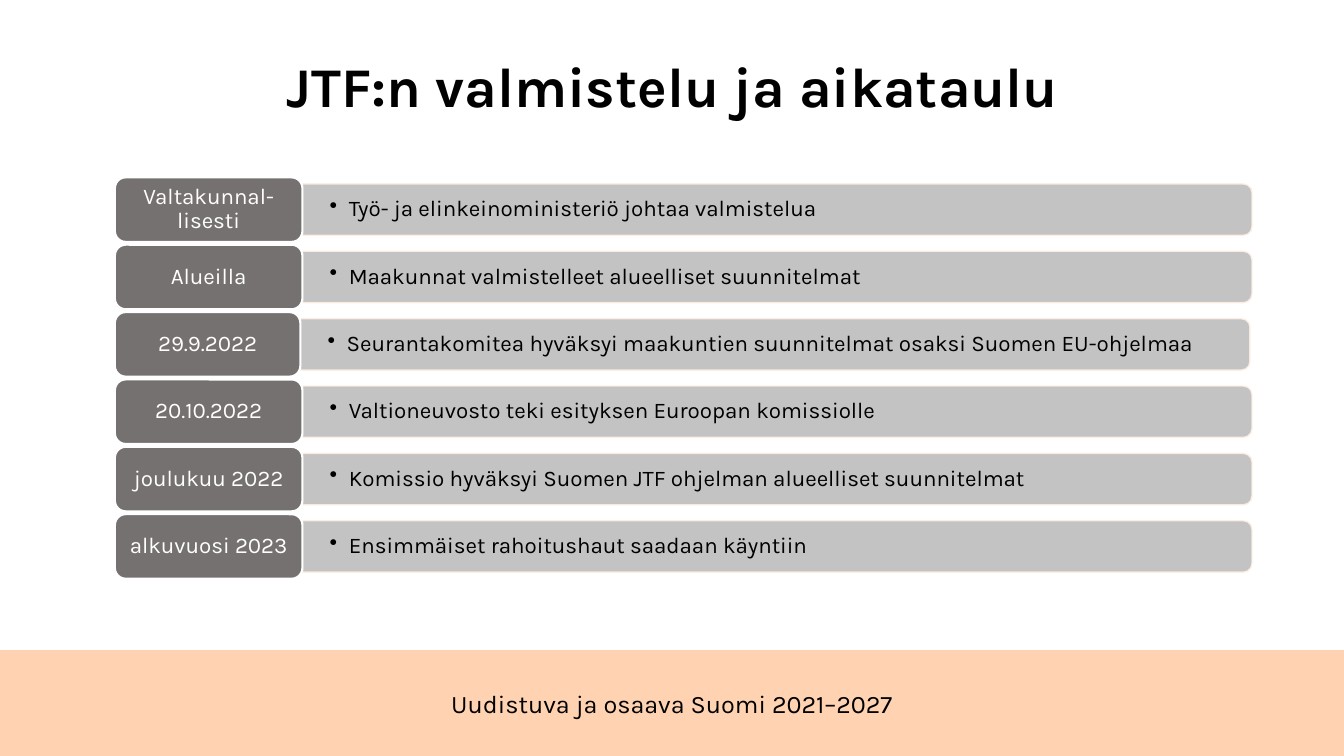
from dataclasses import dataclass

import pptx
import pptx.dml.color
import pptx.enum.shapes
import pptx.enum.text
import pptx.oxml.ns
import pptx.presentation
import pptx.shapes.autoshape
import pptx.slide
import pptx.util
from lxml import etree

SLIDE_WIDTH = pptx.util.Inches(13.33)
SLIDE_HEIGHT = pptx.util.Inches(7.5)
FONT = "Karla"
COLORS = {
    "text": "000000",
    "light": "FFFFFF",
    "footer": "FFD3B1",
    "bar": "BDBDBD",
    "bar_edge": "FFEFE4",
    "label": "767171",
}
SHAPES = pptx.enum.shapes.MSO_SHAPE
ANCHORS = pptx.enum.text.MSO_ANCHOR
CENTER = pptx.enum.text.PP_ALIGN.CENTER

# Shares of the slide's size, in percent
LABEL_LEFT = 8.55
LABEL_WIDTH = 13.95
LABEL_HEIGHT = 8.53
BAR_WIDTH = 70.65
BAR_HEIGHT = 6.8
BAR_TEXT_WIDTH = 70.5
BAR_TEXT_HEIGHT = 6.13
FIRST_ROW_MIDDLE = 27.73
ROW_PITCH = 8.91


@dataclass(frozen=True)
class Stage:
    label: str
    description: str
    label_width: float = LABEL_WIDTH


STAGES = [
    Stage("Valtakunnal-lisesti", "Työ- ja elinkeinoministeriö johtaa valmistelua"),
    Stage("Alueilla", "Maakunnat valmistelleet alueelliset suunnitelmat"),
    Stage("29.9.2022",
          "Seurantakomitea hyväksyi maakuntien suunnitelmat osaksi Suomen EU-ohjelmaa",
          label_width=13.8),
    Stage("20.10.2022", "Valtioneuvosto teki esityksen Euroopan komissiolle"),
    Stage("joulukuu 2022", "Komissio hyväksyi Suomen JTF ohjelman alueelliset suunnitelmat"),
    Stage("alkuvuosi 2023", "Ensimmäiset rahoitushaut saadaan käyntiin"),
]


@dataclass(frozen=True)
class Area:
    """A rectangle in percent of the slide's width and height."""
    left: float
    top: float
    width: float
    height: float

    def box(self) -> tuple[int, int, int, int]:
        return (round(SLIDE_WIDTH * self.left / 100), round(SLIDE_HEIGHT * self.top / 100),
                round(SLIDE_WIDTH * self.width / 100), round(SLIDE_HEIGHT * self.height / 100))


def rgb(name: str) -> pptx.dml.color.RGBColor:
    return pptx.dml.color.RGBColor.from_string(COLORS[name])


def write(shape: pptx.shapes.autoshape.Shape, text: str, size: float, color: str = "text",
          inset: tuple[float, float] = (0, 0), anchor: ANCHORS = ANCHORS.MIDDLE,
          bold: bool = False, spacing: float = 0.9, bullet: bool = False) -> None:
    """Set one paragraph, centred unless it has a bullet; inset is in inches."""
    frame = shape.text_frame
    frame.word_wrap = True
    frame.vertical_anchor = anchor
    frame.margin_left = frame.margin_right = pptx.util.Inches(inset[0])
    frame.margin_top = frame.margin_bottom = pptx.util.Inches(inset[1])
    frame.text = text
    paragraph = frame.paragraphs[0]
    paragraph.line_spacing = spacing
    if bullet:
        properties = paragraph._p.get_or_add_pPr()
        indent = pptx.util.Inches(0.19)
        properties.set("marL", str(indent))
        properties.set("indent", str(-indent))
        etree.SubElement(properties, pptx.oxml.ns.qn("a:buChar"), char="•")
    else:
        paragraph.alignment = CENTER
    font = paragraph.runs[0].font
    font.name, font.size, font.bold = FONT, pptx.util.Pt(size), bold
    font.color.rgb = rgb(color)


def add_block(slide: pptx.slide.Slide, kind: SHAPES, box: tuple[int, int, int, int], fill: str,
              edge: str = "", edge_width: float = 1) -> pptx.shapes.autoshape.Shape:
    block = slide.shapes.add_shape(kind, *box)
    block.shadow.inherit = False
    block.fill.solid()
    block.fill.fore_color.rgb = rgb(fill)
    if edge:
        block.line.color.rgb = rgb(edge)
        block.line.width = pptx.util.Pt(edge_width)
    else:
        block.line.fill.background()
    return block


def add_bar(slide: pptx.slide.Slide, area: Area) -> None:
    """Draw a translucent bar rounded on its right side by turning it a quarter."""
    left, top, width, height = area.box()
    shift = (width - height) // 2
    bar = add_block(slide, SHAPES.ROUND_2_SAME_RECTANGLE,
                    (left + shift, top - shift, height, width), "bar", "bar_edge")
    bar.rotation = 90
    for color in bar._element.spPr.iter(pptx.oxml.ns.qn("a:srgbClr")):
        etree.SubElement(color, pptx.oxml.ns.qn("a:alpha"), val="90000")


def add_stage(slide: pptx.slide.Slide, stage: Stage, middle: float) -> None:
    bar_left = LABEL_LEFT + stage.label_width
    add_bar(slide, Area(bar_left, middle - BAR_HEIGHT / 2, BAR_WIDTH, BAR_HEIGHT))
    description = slide.shapes.add_textbox(
        *Area(bar_left, middle - BAR_TEXT_HEIGHT / 2, BAR_TEXT_WIDTH, BAR_TEXT_HEIGHT).box())
    write(description, stage.description, 16, inset=(0.27, 0.14), bullet=True)
    label = add_block(
        slide, SHAPES.ROUNDED_RECTANGLE,
        Area(LABEL_LEFT, middle - LABEL_HEIGHT / 2, stage.label_width, LABEL_HEIGHT).box(),
        "label", "light", 1.5)
    write(label, stage.label, 16, "light", inset=(0.07, 0.03))


def build(deck: pptx.presentation.Presentation) -> None:
    slide = deck.slides.add_slide(deck.slide_layouts[6])
    add_block(slide, SHAPES.RECTANGLE, Area(0, 86, 100, 14).box(), "footer")
    programme = slide.shapes.add_textbox(*Area(24.4, 91.1, 51.2, 4).box())
    write(programme, "Uudistuva ja osaava Suomi 2021–2027", 18, spacing=1.0)
    title = slide.shapes.add_textbox(*Area(6.9, 5.33, 86.25, 10.53).box())
    write(title, "JTF:n valmistelu ja aikataulu", 40, anchor=ANCHORS.BOTTOM, bold=True)
    for row, stage in enumerate(STAGES):
        add_stage(slide, stage, FIRST_ROW_MIDDLE + row * ROW_PITCH)


def main() -> None:
    deck = pptx.Presentation()
    deck.slide_width, deck.slide_height = SLIDE_WIDTH, SLIDE_HEIGHT
    build(deck)
    deck.save("out.pptx")


if __name__ == "__main__":
    main()
